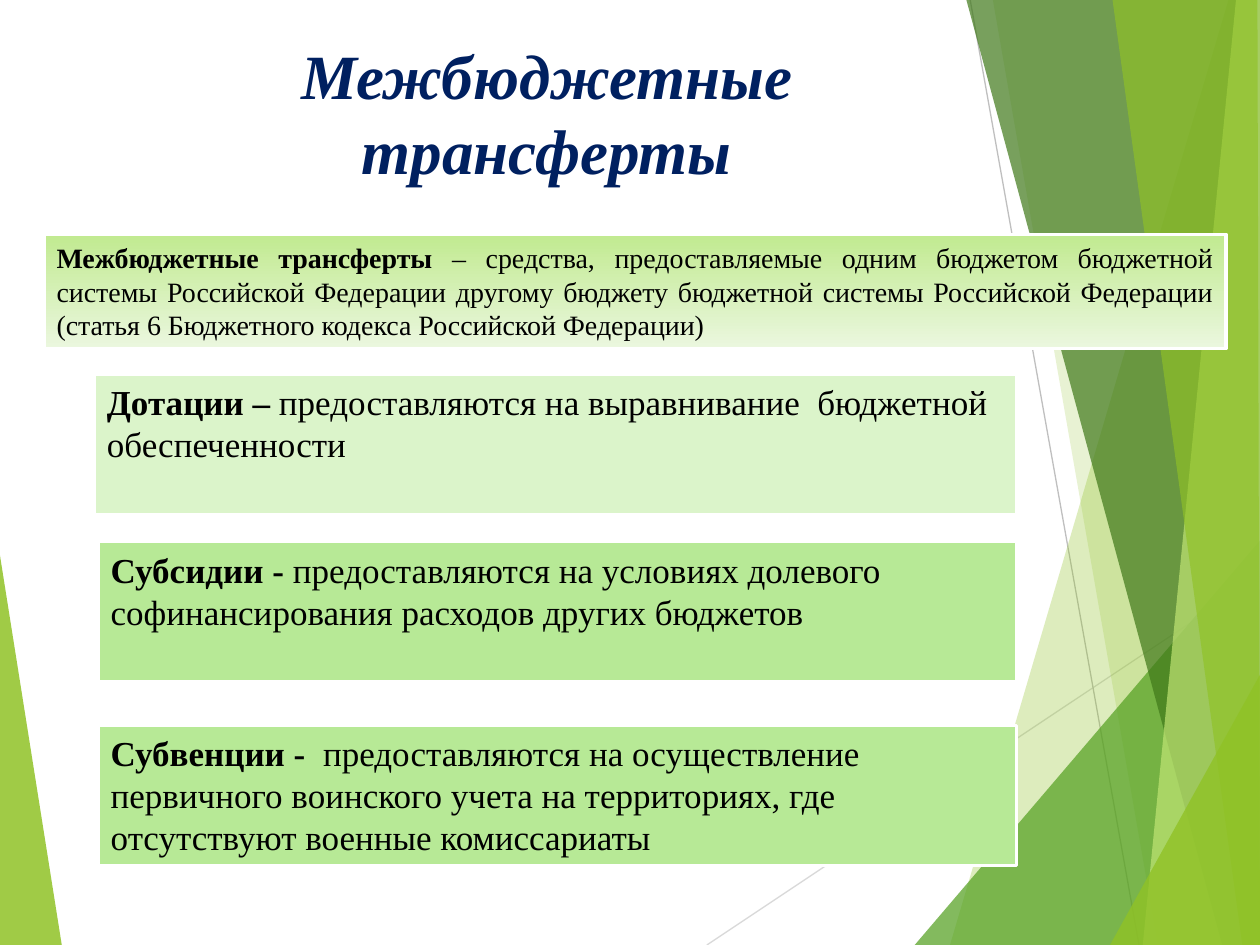
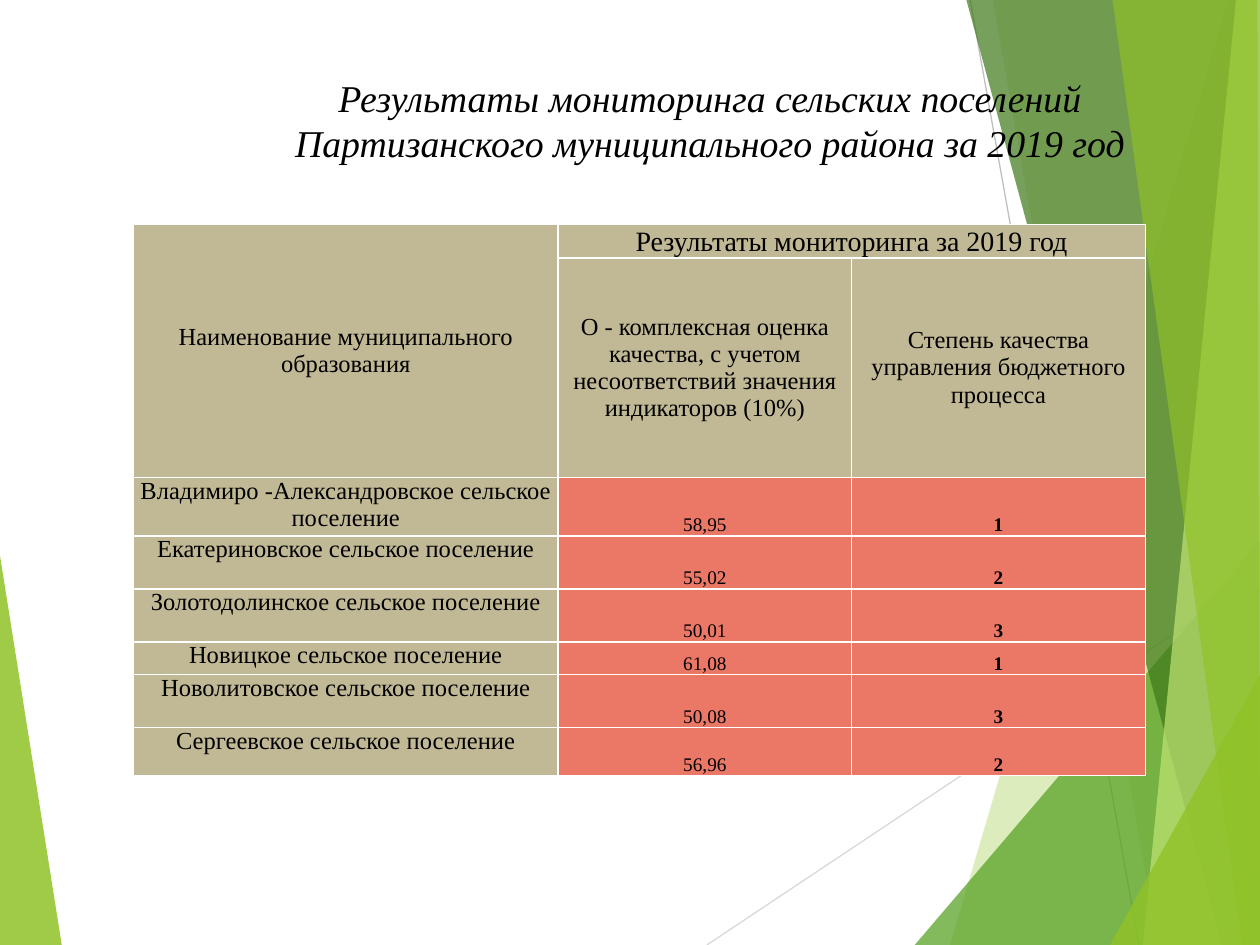
from dataclasses import dataclass

from lxml import etree
from pptx import Presentation
from pptx.dml.color import RGBColor
from pptx.enum.shapes import MSO_CONNECTOR, MSO_SHAPE
from pptx.enum.text import MSO_ANCHOR, PP_ALIGN
from pptx.oxml.ns import qn
from pptx.util import Emu, Inches, Pt

RECTANGLE = MSO_SHAPE.RECTANGLE
STRAIGHT = MSO_CONNECTOR.STRAIGHT
LEFT, CENTER, JUSTIFY = PP_ALIGN.LEFT, PP_ALIGN.CENTER, PP_ALIGN.JUSTIFY
TOP, MIDDLE, BOTTOM = MSO_ANCHOR.TOP, MSO_ANCHOR.MIDDLE, MSO_ANCHOR.BOTTOM

FONT = "Times New Roman"
WHITE = RGBColor(0xFF, 0xFF, 0xFF)
BLACK = RGBColor(0x00, 0x00, 0x00)
NAVY = RGBColor(0x00, 0x20, 0x60)
LIME = RGBColor(0x90, 0xC2, 0x26)
PALE_LIME = RGBColor(0xC0, 0xE4, 0x74)
GREEN = RGBColor(0x54, 0xA0, 0x21)
DARK_GREEN = RGBColor(0x3F, 0x78, 0x19)
LIGHT_GRAY = RGBColor(0xD9, 0xD9, 0xD9)
GRAY = RGBColor(0xBF, 0xBF, 0xBF)
GRADIENT = (RGBColor(0xC1, 0xEA, 0x90), RGBColor(0xEB, 0xF7, 0xDF))
MINT = RGBColor(0xDB, 0xF4, 0xCA)
LIGHT_GREEN = RGBColor(0xB7, 0xE9, 0x96)
SAND = RGBColor(0xC1, 0xB9, 0x95)
CORAL = RGBColor(0xEB, 0x77, 0x66)

WIDTH, HEIGHT = Inches(10), Inches(7.5)
COLUMN, ROW = WIDTH // 100, HEIGHT // 100

BACK_LINES = (
    ((56.1, 100), (100, 61), LIGHT_GRAY),
    ((77, 0), (90.4, 100), GRAY),
)
LEFT_BAND = (((0, 58.8), (4.9, 100), (0, 100)), LIME, 85)
RIGHT_BANDS = (
    (((97.5, 0), (75.4, 100), (100, 100), (100, 0)), LIME, 30),
    (((78.8, 0), (91.9, 100), (100, 100), (100, 0)), LIME, 20),
    (((72.6, 100), (100, 57.2), (100, 100)), GREEN, 72),
    (((76.7, 0), (97, 100), (100, 100), (100, 0)), DARK_GREEN, 70),
    (((98.1, 0), (90.7, 100), (100, 100), (100, 0)), PALE_LIME, 70),
    (((88.3, 0), (98.6, 100), (100, 100), (99.8, 0)), LIME, 65),
    (((88.1, 100), (100, 71.4), (100, 100)), LIME, 80),
)

TRANSFERS = (
    ("Дотации – ", "предоставляются на выравнивание  бюджетной обеспеченности",
     0, 0, MINT),
    ("Субсидии - ", "предоставляются на условиях долевого софинансирования "
     "расходов других бюджетов", 0.3, 17.75, LIGHT_GREEN),
    ("Субвенции -  ", "предоставляются на осуществление первичного воинского "
     "учета на территориях, где отсутствуют военные комиссариаты",
     0.3, 37.2, LIGHT_GREEN),
)
SETTLEMENTS = (
    ("Владимиро -Александровское", "58,95", "1"),
    ("Екатериновское", "55,02", "2"),
    ("Золотодолинское", "50,01", "3"),
    ("Новицкое", "61,08", "1"),
    ("Новолитовское", "50,08", "3"),
    ("Сергеевское", "56,96", "2"),
)
TABLE_COLUMNS = (33.7, 23.3, 23.3)
TABLE_ROWS = (3.47, 23.2, 5.7, 5.6, 5.6, 3.47, 5.6, 5.05)


@dataclass(frozen=True)
class Box:
    left: float
    top: float
    width: float
    height: float

    def inner(self, left, top, width, height):
        return Box(self.left + left, self.top + top, width, height)

    def point(self, column, row):
        return (Emu(round((self.left + column) * COLUMN)),
                Emu(round((self.top + row) * ROW)))

    def extents(self):
        return (*self.point(0, 0), Emu(round(self.width * COLUMN)),
                Emu(round(self.height * ROW)))


PAGE = Box(0, 0, 100, 100)


def write(frame, *texts, size, color=BLACK, bold=(False,), italic=False,
          align=LEFT, anchor=TOP):
    frame.word_wrap = True
    frame.vertical_anchor = anchor
    paragraph = frame.paragraphs[0]
    paragraph.alignment = align
    for text, is_bold in zip(texts, bold):
        run = paragraph.add_run()
        run.text = text
        run.font.name = FONT
        run.font.size = Pt(size)
        run.font.color.rgb = color
        run.font.bold = is_bold
        run.font.italic = italic


def add_line(slide, box, start, end, color):
    line = slide.shapes.add_connector(
        STRAIGHT, *box.point(*start), *box.point(*end))
    line.line.color.rgb = color
    line.line.width = Pt(0.75)
    etree.SubElement(line._element.spPr, qn("a:effectLst"))


def add_band(slide, box, points, color, opacity):
    start, *others = [box.point(*point) for point in points]
    builder = slide.shapes.build_freeform(*start)
    builder.add_line_segments(others, close=True)
    band = builder.convert_to_shape()
    band.shadow.inherit = False
    band.fill.solid()
    band.fill.fore_color.rgb = color
    band.line.fill.background()
    fill_color = band._element.spPr.find(
        qn("a:solidFill")).find(qn("a:srgbClr"))
    etree.SubElement(fill_color, qn("a:alpha"), val=str(opacity * 1000))


def add_backdrop(slide, box):
    add_band(slide, box, *LEFT_BAND)
    for line in BACK_LINES:
        add_line(slide, box, *line)
    for band in RIGHT_BANDS:
        add_band(slide, box, *band)


def add_title(slide, box, text, fill=None, **text_format):
    title = slide.shapes.add_textbox(*box.extents())
    if fill is not None:
        title.fill.solid()
        title.fill.fore_color.rgb = fill
    write(title.text_frame, text, italic=True, align=CENTER, anchor=MIDDLE,
          **text_format)


def add_panel(slide, box, term, meaning, fill, line_width=1.5, size=20,
              align=LEFT):
    panel = slide.shapes.add_shape(RECTANGLE, *box.extents())
    panel.shadow.inherit = False
    if isinstance(fill, RGBColor):
        panel.fill.solid()
        panel.fill.fore_color.rgb = fill
    else:
        panel.fill.gradient()
        panel.fill.gradient_angle = 270
        for stop, color, position in zip(panel.fill.gradient_stops, fill, (0, 1)):
            stop.color.rgb = color
            stop.position = position
    panel.line.color.rgb = WHITE
    panel.line.width = Pt(line_width)
    write(panel.text_frame, term, meaning, size=size, bold=(True, False),
          align=align)


def add_transfers(slide, box):
    for term, meaning, indent, top, fill in TRANSFERS:
        panel = box.inner(indent, top, box.width - indent, 14.8)
        add_panel(slide, panel, term, meaning, fill)


def style_cell(cell, fill):
    cell.margin_left = cell.margin_right = 0
    cell.margin_top = cell.margin_bottom = 0
    properties = cell._tc.get_or_add_tcPr()
    for side in ("lnL", "lnR", "lnT", "lnB"):
        border = etree.SubElement(properties, qn(f"a:{side}"), w=str(Pt(1)))
        solid = etree.SubElement(border, qn("a:solidFill"))
        etree.SubElement(solid, qn("a:srgbClr"), val=str(WHITE))
    cell.fill.solid()
    cell.fill.fore_color.rgb = fill


def write_cell(cell, text, **text_format):
    write(cell.text_frame, text, align=CENTER, **text_format)
    cell.vertical_anchor = text_format.get("anchor", TOP)


def add_results(slide, box):
    table = slide.shapes.add_table(
        len(TABLE_ROWS), len(TABLE_COLUMNS), *box.extents()).table
    for column, width in zip(table.columns, TABLE_COLUMNS):
        column.width = Emu(round(width * COLUMN))
    for row, height in zip(table.rows, TABLE_ROWS):
        row.height = Emu(round(height * ROW))
    for row_index in range(len(TABLE_ROWS)):
        for column_index in range(len(TABLE_COLUMNS)):
            is_value = row_index > 1 and column_index > 0
            style_cell(table.cell(row_index, column_index),
                       CORAL if is_value else SAND)
    table.cell(0, 0).merge(table.cell(1, 0))
    table.cell(0, 1).merge(table.cell(0, 2))

    write_cell(table.cell(0, 1), "Результаты мониторинга за 2019 год",
               size=16, anchor=BOTTOM)
    headings = (
        (0, 0, "Наименование муниципального образования"),
        (1, 1, "O - комплексная оценка качества, с учетом несоответствий "
               "значения индикаторов (10%)"),
        (1, 2, "Степень качества управления бюджетного процесса"),
    )
    for row, column, text in headings:
        write_cell(table.cell(row, column), text, size=14, anchor=MIDDLE)
    for row, (name, score, degree) in enumerate(SETTLEMENTS, start=2):
        write_cell(table.cell(row, 0), f"{name} сельское поселение", size=14)
        write_cell(table.cell(row, 1), score, size=11, anchor=BOTTOM)
        write_cell(table.cell(row, 2), degree, size=11, bold=(True,),
                   anchor=BOTTOM)


def build_transfers_slide(slide, box):
    add_backdrop(slide, box)
    add_title(slide, box.inner(13.2, 3.1, 60.4, 17.5),
              "Межбюджетные трансферты", fill=WHITE, size=36, color=NAVY,
              bold=(True,))
    add_panel(slide, box.inner(3.5, 24.8, 93.8, 12.1),
              "Межбюджетные трансферты ",
              "– средства, предоставляемые одним бюджетом бюджетной системы "
              "Российской Федерации другому бюджету бюджетной системы "
              "Российской Федерации (статья 6 Бюджетного кодекса Российской "
              "Федерации)",
              GRADIENT, line_width=2, size=16, align=JUSTIFY)
    add_transfers(slide, box.inner(7.5, 39.6, 73.2, 52))


def build_monitoring_slide(slide, box):
    add_backdrop(slide, box)
    add_title(slide, box.inner(17.7, 6.9, 77.3, 11.6),
              "Результаты мониторинга сельских поселений Партизанского "
              "муниципального района за 2019 год", size=21.6)
    add_results(slide, box.inner(10.6, 23.75, sum(TABLE_COLUMNS),
                                 sum(TABLE_ROWS)))


def main():
    presentation = Presentation()
    presentation.slide_width, presentation.slide_height = WIDTH, HEIGHT
    blank = presentation.slide_layouts[6]
    for build in (build_transfers_slide, build_monitoring_slide):
        build(presentation.slides.add_slide(blank), PAGE)
    presentation.save("out.pptx")


if __name__ == "__main__":
    main()
